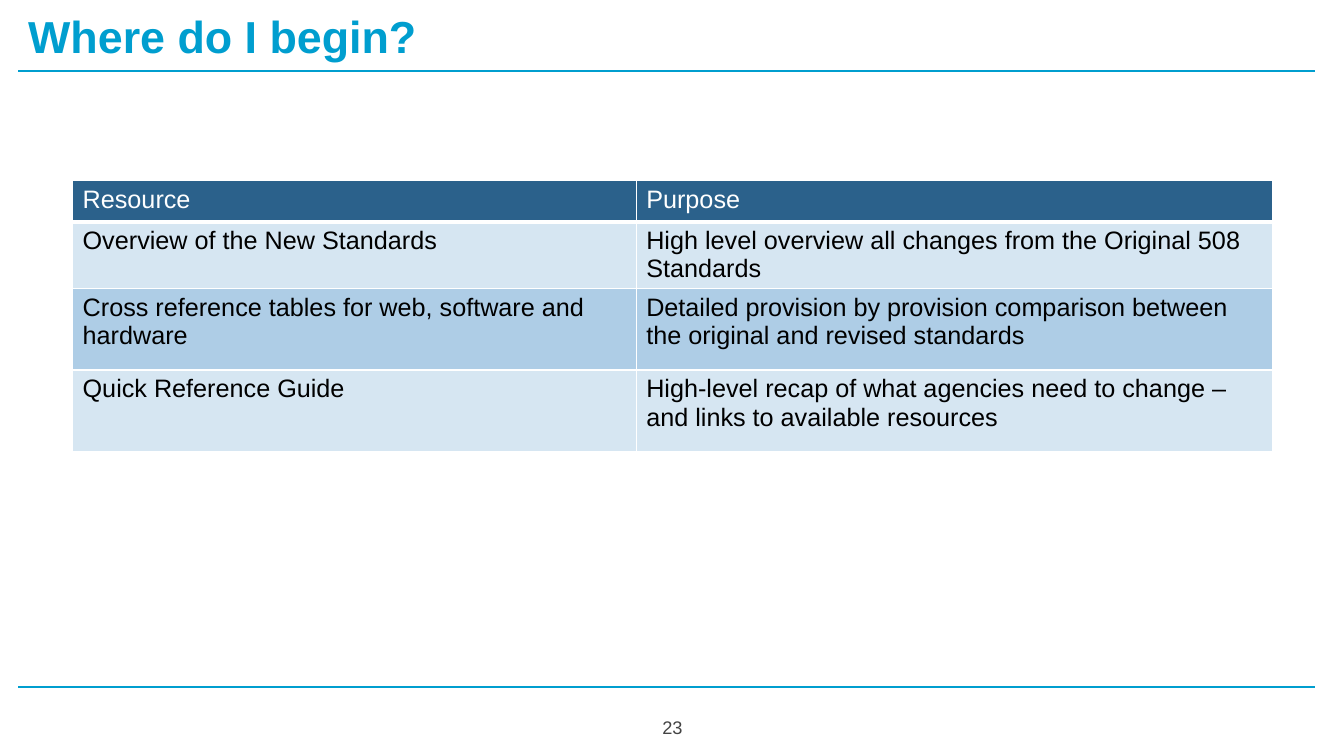
from dataclasses import dataclass

from lxml import etree
from pptx import Presentation
from pptx.dml.color import RGBColor
from pptx.enum import shapes, text
from pptx.oxml import ns
from pptx.util import Inches, Pt

FONT = "Arial"
CYAN = RGBColor(0x00, 0x9E, 0xCF)
GREY = RGBColor(0x43, 0x43, 0x43)
WHITE = RGBColor(0xFF, 0xFF, 0xFF)
BLACK = RGBColor(0x00, 0x00, 0x00)
NAVY = RGBColor(0x2B, 0x61, 0x8B)
PALE_BLUE = RGBColor(0xD6, 0xE6, 0xF2)
MID_BLUE = RGBColor(0xAE, 0xCD, 0xE6)


@dataclass
class Row:
    resource: str
    purpose: str
    height: float


ROWS = [
    Row("Resource", "Purpose", 0.41),
    Row("Overview of the New Standards",
        "High level overview all changes from the Original 508 Standards", 0.41),
    Row("Cross reference tables for web, software and hardware",
        "Detailed provision by provision comparison between the original and revised standards", 0.81),
    Row("Quick Reference Guide",
        "High-level recap of what agencies need to change – and links to available resources", 0.81),
]
COLUMN_WIDTHS = [5.59, 6.31]
RULE_TOPS = [0.7, 6.82]


def write(tf, words: str, *, size: float, color: RGBColor, bold: bool = False,
          align=text.PP_ALIGN.LEFT) -> None:
    p = tf.paragraphs[0]
    p.alignment = align
    r = p.add_run()
    r.text = words
    r.font.name = FONT
    r.font.size = Pt(size)
    r.font.bold = bold
    r.font.color.rgb = color


def frame(tf) -> None:
    tf.word_wrap = True
    tf.auto_size = text.MSO_AUTO_SIZE.NONE
    tf.vertical_anchor = text.MSO_ANCHOR.MIDDLE
    tf.margin_left = tf.margin_right = tf.margin_top = tf.margin_bottom = Inches(0.1)


def place(sp, left: float, top: float, width: float, height: float) -> None:
    sp.left, sp.top = Inches(left), Inches(top)
    sp.width, sp.height = Inches(width), Inches(height)


def add_rule(s, top: float) -> None:
    line = s.shapes.add_connector(shapes.MSO_CONNECTOR.STRAIGHT,
                                  Inches(0.18), Inches(top), Inches(13.04), Inches(top))
    line.line.color.rgb = CYAN
    line.line.width = Pt(1.5)
    etree.SubElement(line._element.spPr, ns.qn("a:effectLst"))


def add_borders(cell, top: float, bottom: float) -> None:
    tc_pr = cell._tc.get_or_add_tcPr()
    for side, width in {"L": 1, "R": 1, "T": top, "B": bottom}.items():
        ln = etree.SubElement(tc_pr, ns.qn(f"a:ln{side}"), w=str(Pt(width)))
        fill = etree.SubElement(ln, ns.qn("a:solidFill"))
        etree.SubElement(fill, ns.qn("a:srgbClr"), val=str(WHITE))


def add_resource_table(s) -> None:
    height = sum(row.height for row in ROWS)
    table = s.shapes.add_table(len(ROWS), len(COLUMN_WIDTHS), Inches(0.72), Inches(1.79),
                               Inches(sum(COLUMN_WIDTHS)), Inches(height)).table
    for column, width in zip(table.columns, COLUMN_WIDTHS):
        column.width = Inches(width)
    for i, row in enumerate(ROWS):
        table.rows[i].height = Inches(row.height)
        header = i == 0
        band = NAVY if header else (MID_BLUE, PALE_BLUE)[i % 2]
        for j, words in enumerate((row.resource, row.purpose)):
            cell = table.cell(i, j)
            add_borders(cell, top=3 if i == 1 else 1, bottom=3 if header else 1)
            cell.fill.solid()
            cell.fill.fore_color.rgb = band
            write(cell.text_frame, words, size=18, color=WHITE if header else BLACK)


def main() -> None:
    prs = Presentation()
    prs.slide_width, prs.slide_height = Inches(13.33), Inches(7.5)
    s = prs.slides.add_slide(prs.slide_layouts[5])

    # Title
    title = s.shapes.title
    place(title, 0.18, 0, 9.78, 0.7)
    frame(title.text_frame)
    write(title.text_frame, "Where do I begin?", size=32, color=CYAN, bold=True)

    # Header and footer rules
    for top in RULE_TOPS:
        add_rule(s, top)

    # Resources
    add_resource_table(s)

    # Slide number
    number = s.shapes.add_textbox(Inches(6.37), Inches(6.93), Inches(0.6), Inches(0.57))
    frame(number.text_frame)
    write(number.text_frame, "23", size=13, color=GREY, align=text.PP_ALIGN.CENTER)

    prs.save("out.pptx")


if __name__ == "__main__":
    main()
